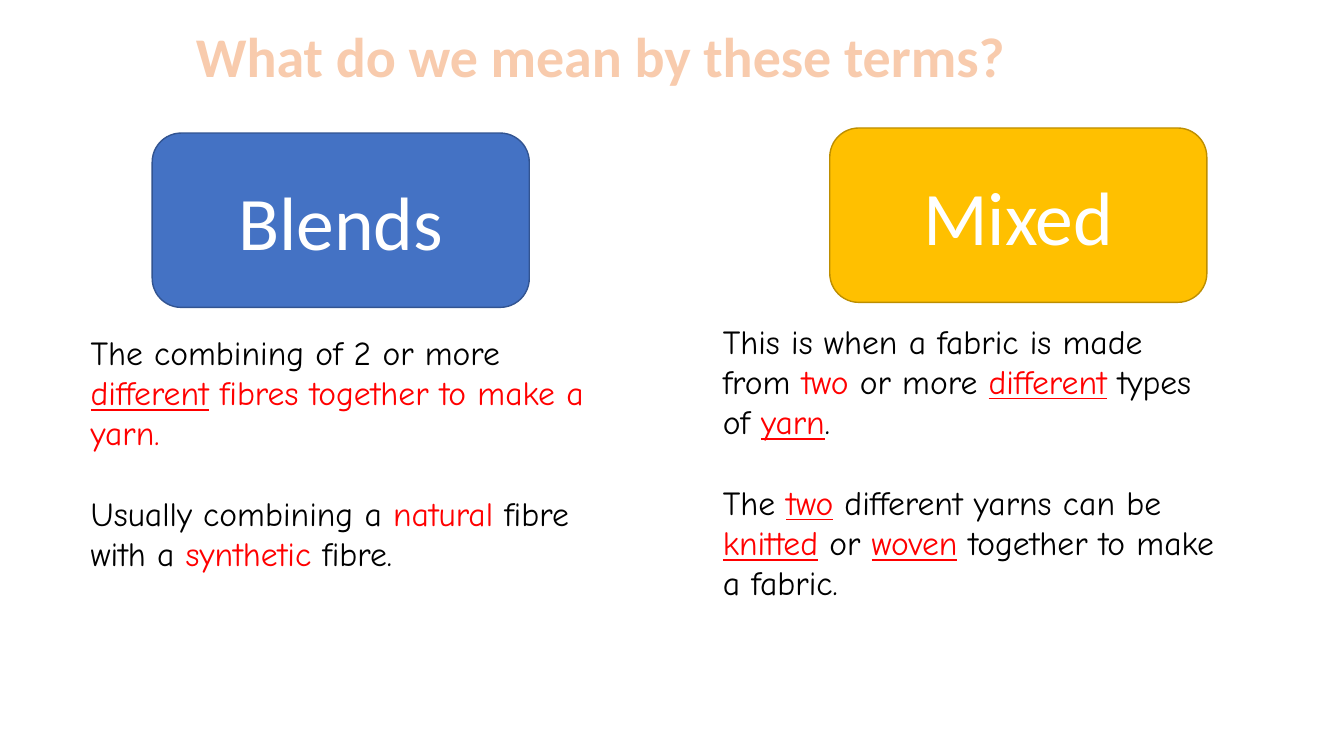
from dataclasses import dataclass

from lxml.etree import SubElement
from pptx import Presentation
from pptx.dml.color import RGBColor
from pptx.enum.shapes import MSO_SHAPE
from pptx.enum.text import MSO_ANCHOR, MSO_AUTO_SIZE, PP_ALIGN
from pptx.oxml.ns import qn
from pptx.util import Inches, Pt


@dataclass(frozen=True)
class Theme:
    head: str = "Calibri"
    body: str = "Comic Neue"
    title_size: float = 40
    card_size: float = 54
    body_size: float = 24
    gap: float = 28.8
    peach: str = "F8CBAD"
    orange: str = "ED7D31"
    blue: str = "4472C4"
    navy: str = "325491"
    gold: str = "FFC000"
    bronze: str = "BD8E00"
    white: str = "FFFFFF"
    black: str = "000000"
    red: str = "FF0000"


class Page:
    def __init__(self, slide, theme):
        self.slide = slide
        self.theme = theme

    def style(self, run, name, size, color, bold=None, under=None):
        font = run.font
        font.name, font.size = name, Pt(size)
        font.color.rgb = RGBColor.from_string(color)
        font.bold, font.underline = bold, under

    def box(self, left, top, width, height, wrap=True):
        box = self.slide.shapes.add_textbox(
            Inches(left), Inches(top), Inches(width), Inches(height))
        frame = box.text_frame
        frame.word_wrap = wrap
        frame.auto_size = MSO_AUTO_SIZE.SHAPE_TO_FIT_TEXT
        return frame

    def title(self, text, *area):
        look = self.theme
        frame = self.box(*area, wrap=False)
        frame.text = text
        line = frame.paragraphs[0]
        line.alignment = PP_ALIGN.CENTER
        run = line.runs[0]
        self.style(run, look.head, look.title_size, look.peach, bold=True)
        # Letter outline, which must precede the fill
        props = run.font._element
        edge = SubElement(props, qn("a:ln"), w=str(Pt(1.75)))
        fill = SubElement(edge, qn("a:solidFill"))
        SubElement(fill, qn("a:srgbClr"), val=look.orange)
        props.insert(0, edge)

    def card(self, text, left, top, fill, edge):
        look = self.theme
        card = self.slide.shapes.add_shape(
            MSO_SHAPE.ROUNDED_RECTANGLE,
            Inches(left), Inches(top), Inches(3.74), Inches(1.73))
        card.shadow.inherit = False
        card.fill.solid()
        card.fill.fore_color.rgb = RGBColor.from_string(fill)
        card.line.color.rgb = RGBColor.from_string(edge)
        card.line.width = Pt(1)
        frame = card.text_frame
        frame.text = text
        frame.vertical_anchor = MSO_ANCHOR.MIDDLE
        line = frame.paragraphs[0]
        line.alignment = PP_ALIGN.CENTER
        self.style(line.runs[0], look.head, look.card_size, look.white)

    def prose(self, paras, *area):
        """Write paragraphs where *words* are red and _words_ red underlined."""
        look = self.theme
        frame = self.box(*area)
        for index, text in enumerate(paras):
            line = frame.paragraphs[0] if index == 0 else frame.add_paragraph()
            if index:
                line.space_before = Pt(look.gap)
            # Each mark sits in pairs, so odd pieces are the marked ones
            for spot, piece in enumerate(text.replace("_", "*_").split("*")):
                under = piece.startswith("_") and spot % 2 == 1
                words = piece.lstrip("_")
                if words:
                    run = line.add_run()
                    run.text = words
                    color = look.red if spot % 2 else look.black
                    self.style(run, look.body, look.body_size, color,
                               under=under)


def main():
    deck = Presentation()
    deck.slide_width, deck.slide_height = Inches(13.33), Inches(7.5)
    look = Theme()
    page = Page(deck.slides.add_slide(deck.slide_layouts[6]), look)

    # Term cards
    page.card("Blends", 1.51, 1.32, look.blue, look.navy)
    page.card("Mixed", 8.23, 1.27, look.gold, look.bronze)

    # Heading
    page.title("What do we mean by these terms?", 1.8, 0.16, 8.31, 0.77)

    # Meanings
    page.prose([
        "The combining of 2 or more _different_ "
        "*fibres together to make a yarn.*",
        "Usually combining a *natural* fibre with a *synthetic* fibre.",
    ], 0.8, 3.24, 5.15, 2.52)
    page.prose([
        "This is when a fabric is made from *two* or more _different_ "
        "types of _yarn_.",
        "The _two_ different yarns can be _knitted_ or _woven_ "
        "together to make a fabric.",
    ], 7.07, 3.13, 5.09, 2.93)

    deck.save("out.pptx")


if __name__ == "__main__":
    main()
